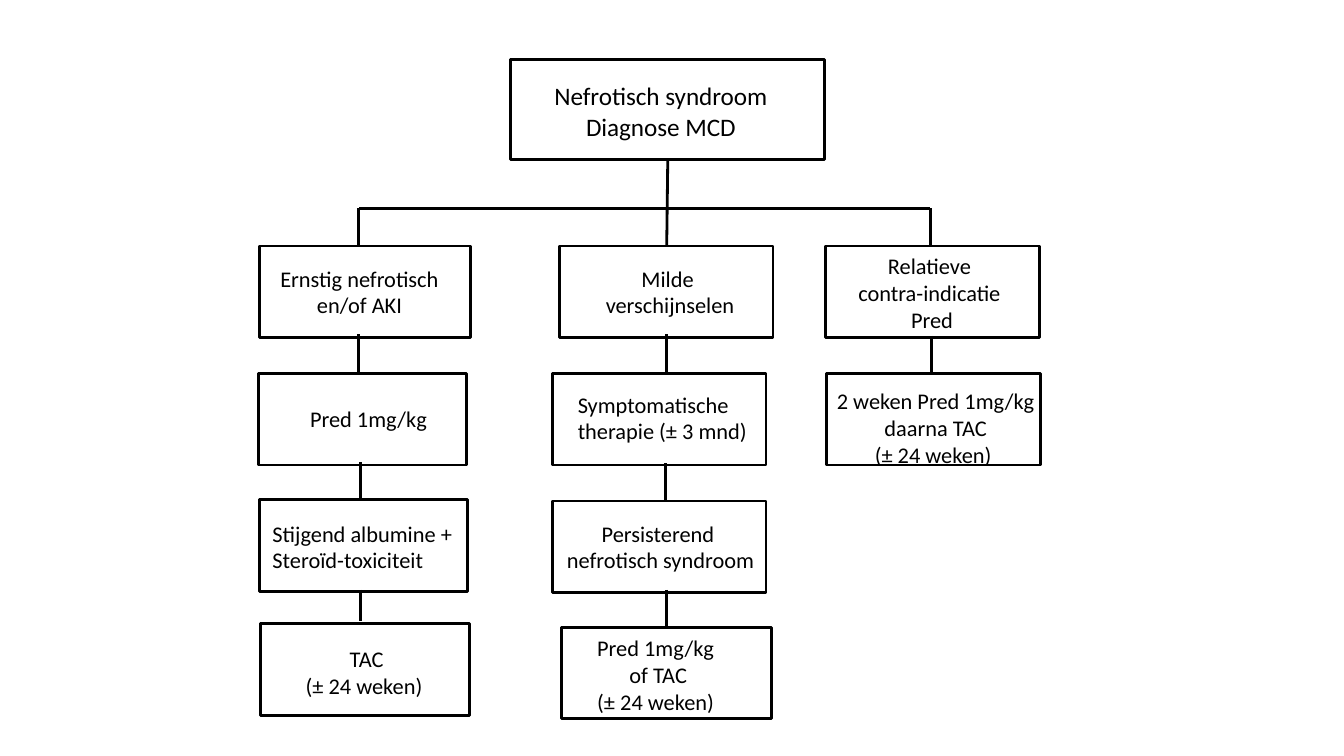
from pptx import Presentation
from pptx.dml.color import RGBColor
from pptx.enum.shapes import MSO_CONNECTOR, MSO_SHAPE
from pptx.enum.text import PP_ALIGN
from pptx.oxml.ns import qn
from pptx.util import Cm, Pt
from lxml.etree import SubElement

COLORS = {"ink": "000000"}
FONT = "Calibri"
INK = RGBColor.from_string(COLORS["ink"])
MID, LEFT = PP_ALIGN.CENTER, PP_ALIGN.LEFT

deck = Presentation()
deck.slide_width, deck.slide_height = Cm(25.4), Cm(14.29)
slide = deck.slides.add_slide(deck.slide_layouts[6])
shapes = slide.shapes

# box: left, top, width, height; label: left, top, width, size, align, text
nodes = [
    (9.65, 1.12, 5.94, 1.9, 10.19, 1.4, 4.6, 13.5, MID, "Nefrotisch syndroom\nDiagnose MCD"),
    (4.9, 4.65, 3.99, 1.73, 5.03, 4.88, 3.53, 12, MID, "Ernstig nefrotisch\nen/of AKI"),
    (4.88, 7.06, 3.94, 1.73, 5.61, 7.54, 2.74, 12, LEFT, "Pred 1mg/kg"),
    (4.9, 9.45, 3.94, 1.73, 4.9, 9.7, 3.94, 12, LEFT, "Stijgend albumine +\nSteroïd-toxiciteit"),
    (4.93, 11.79, 3.94, 1.73, 5.51, 12.07, 2.84, 12, MID, "TAC\n(± 24 weken) "),
    (10.57, 4.65, 4.04, 1.73, 11.18, 4.88, 2.97, 12, MID, "Milde \nverschijnselen"),
    (10.44, 7.06, 4.04, 1.73, 10.67, 7.26, 3.73, 12, LEFT, "Symptomatische\ntherapie (± 3 mnd)"),
    (10.44, 9.47, 4.04, 1.73, 10.44, 9.7, 4.09, 12, MID, "Persisterend \nnefrotisch syndroom"),
    (10.62, 11.86, 3.96, 1.73, 11.02, 11.86, 2.84, 12, MID, "Pred 1mg/kg \nof TAC\n(± 24 weken) "),
    (15.6, 4.65, 4.04, 1.73, 15.95, 4.65, 3.33, 12, MID, "Relatieve \ncontra-indicatie \nPred"),
    (15.62, 7.06, 4.04, 1.73, 15.54, 7.19, 4.29, 12, MID, "2 weken Pred 1mg/kg\ndaarna TAC\n(± 24 weken) "),
]
for left, top, width, height, x, y, span, size, align, text in nodes:
    box = shapes.add_shape(MSO_SHAPE.RECTANGLE, Cm(left), Cm(top), Cm(width), Cm(height))
    box.shadow.inherit = False
    box.fill.background()
    box.line.color.rgb = INK
    box.line.width = Pt(1.5)

    tall = 0.25 + 0.043 * size * len(text.split("\n"))
    label = shapes.add_textbox(Cm(x), Cm(y), Cm(span), Cm(tall))
    frame = label.text_frame
    frame.word_wrap = False
    frame.text = text
    for para in frame.paragraphs:
        para.alignment = align
        for run in para.runs:
            run.font.name = FONT
            run.font.size = Pt(size)
            run.font.color.rgb = INK

links = [
    (12.62, 3.02, 12.6, 4.65),
    (17.58, 3.94, 6.78, 3.94),
    (6.78, 3.94, 6.78, 4.65),
    (17.58, 3.94, 17.58, 4.65),
    (6.78, 6.32, 6.78, 7.04),
    (6.81, 8.74, 6.81, 9.45),
    (6.81, 11.15, 6.81, 11.73),
    (12.6, 6.32, 12.6, 7.04),
    (12.57, 8.76, 12.57, 9.47),
    (12.6, 11.15, 12.6, 11.86),
    (17.6, 6.35, 17.6, 7.06),
]
for ends in links:
    line = shapes.add_connector(MSO_CONNECTOR.STRAIGHT, *[Cm(end) for end in ends])
    line.line.color.rgb = INK
    line.line.width = Pt(1.5)
    SubElement(line._element.spPr, qn("a:effectLst"))

deck.save("out.pptx")
